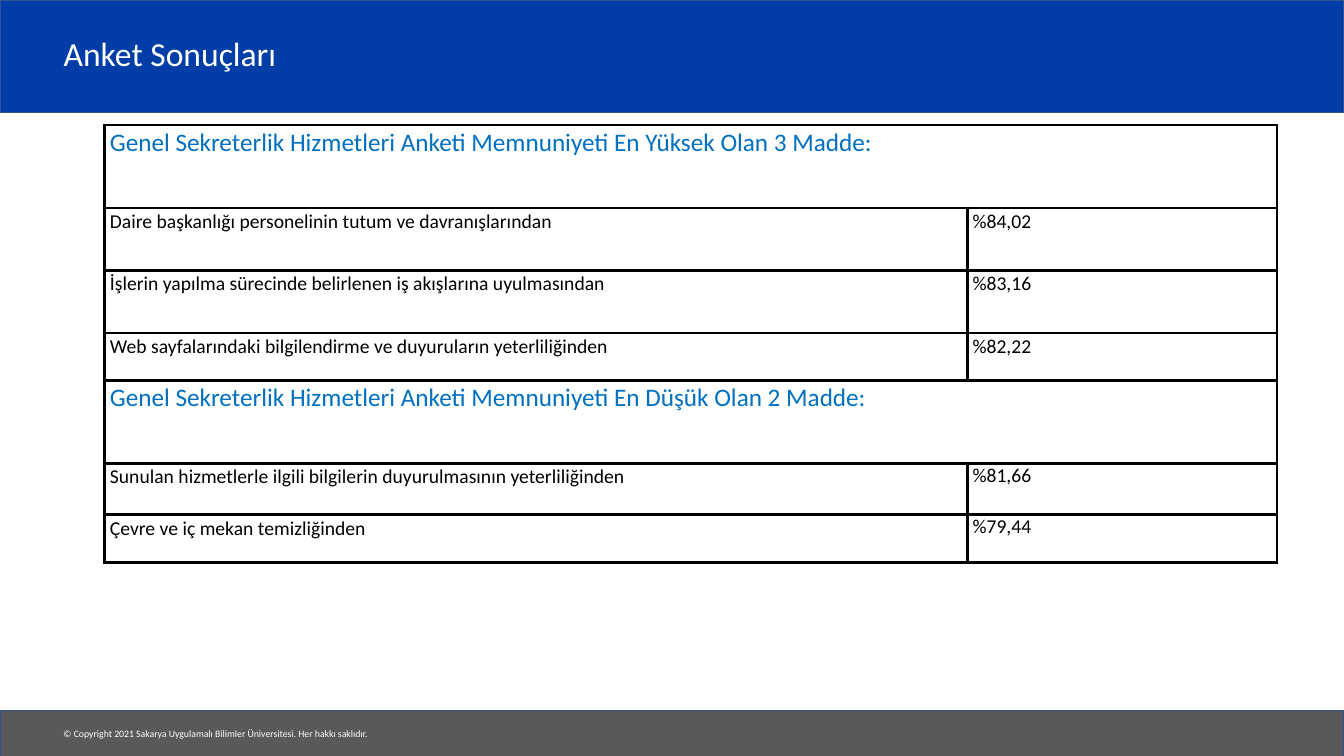
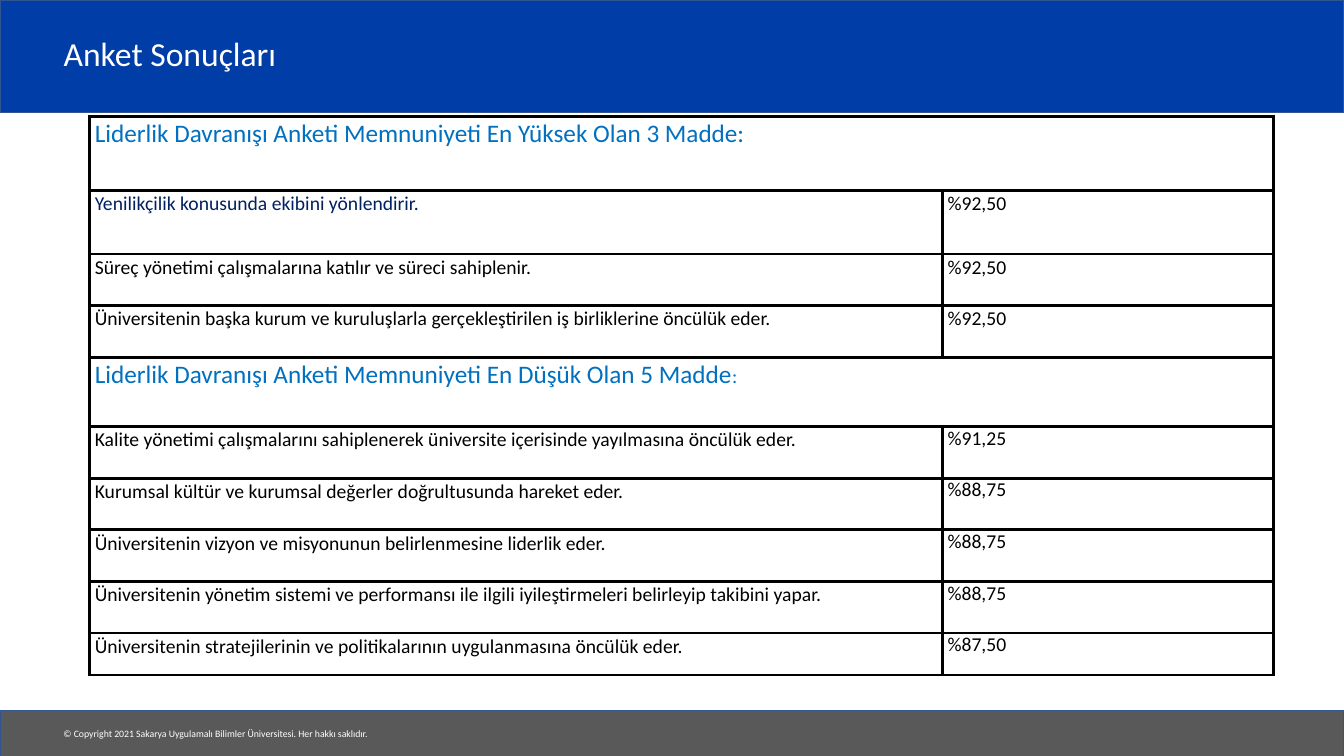
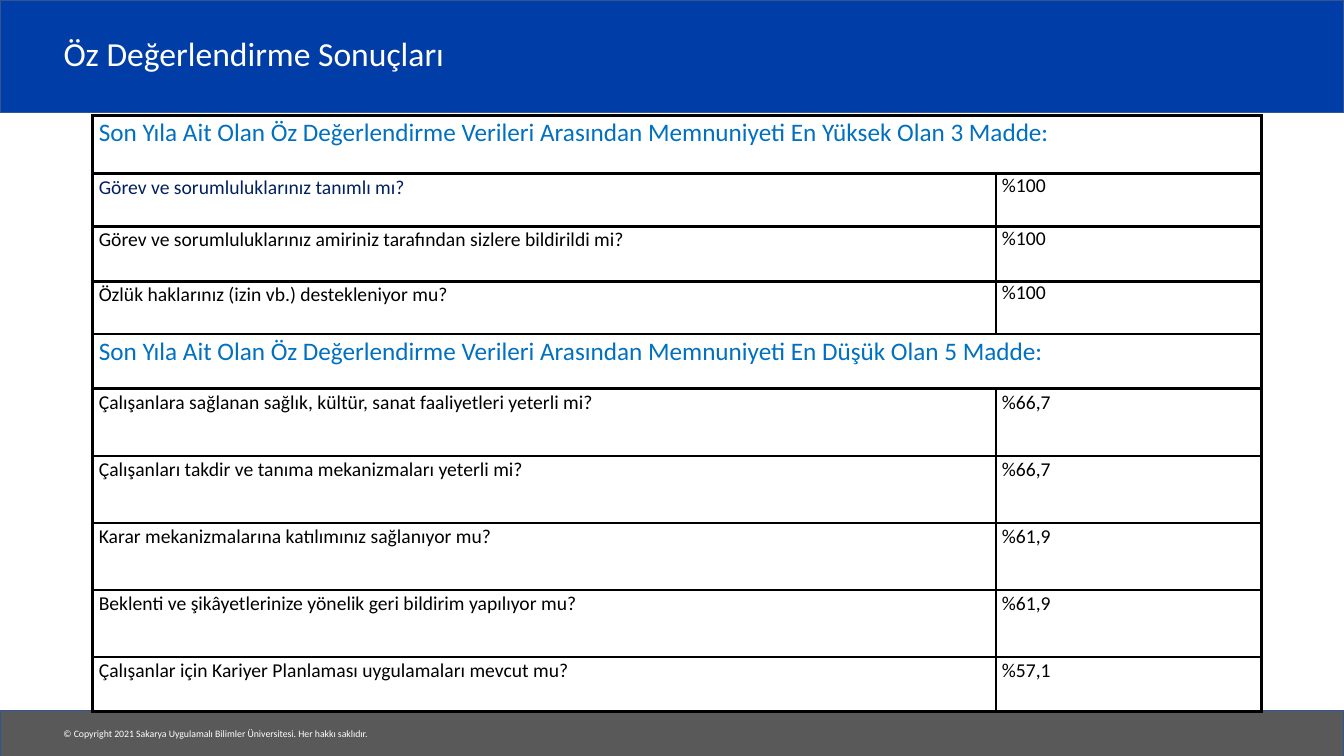
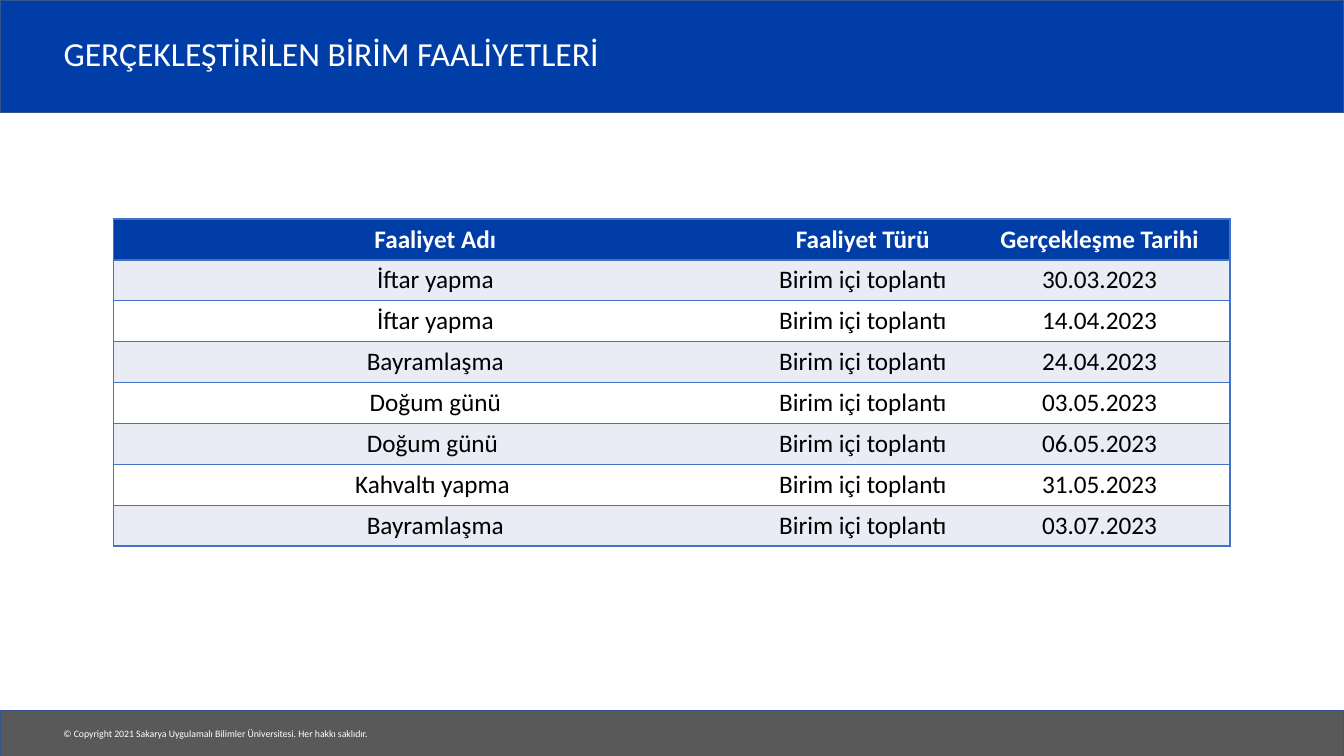
from lxml import etree
from pptx import Presentation
from pptx import util as u
from pptx.dml.color import RGBColor
from pptx.enum import shapes, text
from pptx.oxml.ns import qn

BLUE = RGBColor(0x00, 0x3D, 0xA6)
GREY = RGBColor(0x59, 0x59, 0x59)
EDGE = RGBColor(0x32, 0x54, 0x91)
HEADING = RGBColor(0x00, 0x70, 0xC0)
NAVY = RGBColor(0x00, 0x20, 0x60)
RULE = RGBColor(0x44, 0x72, 0xC4)
STRIPE = RGBColor(0xE9, 0xEB, 0xF5)
BLACK = RGBColor(0x00, 0x00, 0x00)
WHITE = RGBColor(0xFF, 0xFF, 0xFF)

FONT = "Calibri"
WIDTH, HEIGHT = 33.87, 19.05
MARGIN = 1.35
SIDES = "LRTB"


class Report:
    """Holds the shared style and the current slide; lengths are in cm."""

    def __init__(self):
        self.deck = Presentation()
        self.deck.slide_width, self.deck.slide_height = u.Cm(WIDTH), u.Cm(HEIGHT)
        self.layout = self.deck.slide_layouts[5]
        self.page = None

    # Slide with its title; the first one also furnishes the layout
    def slide(self, title):
        first = self.page is None
        if first:
            self.prepare_layout_title()
        self.page = self.deck.slides.add_slide(self.layout)
        if first:
            self.furnish_layout()
        frame = self.page.shapes.title.text_frame
        frame.vertical_anchor = text.MSO_ANCHOR.MIDDLE
        para = frame.paragraphs[0]
        para.alignment = text.PP_ALIGN.LEFT
        para.line_spacing = 0.9
        self.span(para, title, 24, WHITE)

    def prepare_layout_title(self):
        for holder in list(self.layout.placeholders):
            if holder.placeholder_format.type == shapes.PP_PLACEHOLDER.TITLE:
                holder.left, holder.top = u.Cm(MARGIN), u.Cm(0.48)
                holder.width, holder.height = u.Cm(28.02), u.Cm(1.85)
            else:
                holder.element.getparent().remove(holder.element)

    def furnish_layout(self):
        parts = [self.band(0, 2.84, BLUE), self.band(17.9, 1.16, GREY), self.footer()]
        tree = self.layout.element.cSld.spTree
        for part in parts:
            tree.append(part.element)

    def band(self, top, height, colour):
        box = self.page.shapes.add_shape(
            shapes.MSO_SHAPE.RECTANGLE, 0, u.Cm(top), u.Cm(WIDTH), u.Cm(height))
        box.shadow.inherit = False
        box.fill.solid()
        box.fill.fore_color.rgb = colour
        box.line.color.rgb = EDGE
        box.line.width = u.Pt(1)
        return box

    def footer(self):
        box = self.page.shapes.add_textbox(
            u.Cm(MARGIN), u.Cm(18.21), u.Cm(8.36), u.Cm(0.56))
        box.text_frame.word_wrap = False
        self.span(box.text_frame.paragraphs[0],
                  "© Copyright 2021 Sakarya Uygulamalı Bilimler Üniversitesi. "
                  "Her hakkı saklıdır.", 7, WHITE)
        return box

    # Text
    def span(self, para, words, size, colour, bold=False):
        span = para.add_run()
        span.text = words
        span.font.name = FONT
        span.font.size = u.Pt(size)
        span.font.bold = bold
        span.font.color.rgb = colour

    # Tables
    def grid(self, left, top, widths, heights):
        table = self.page.shapes.add_table(
            len(heights), len(widths), u.Cm(left), u.Cm(top),
            u.Cm(sum(widths)), u.Cm(sum(heights))).table
        table.first_row = table.horz_banding = False
        for column, width in zip(table.columns, widths):
            column.width = u.Cm(width)
        for row, height in zip(table.rows, heights):
            row.height = u.Cm(height)
        return table

    def borders(self, cell, colour, points, drawn=SIDES):
        props = cell._tc.get_or_add_tcPr()
        for side in SIDES:
            line = etree.SubElement(props, qn("a:ln" + side), w=str(int(u.Pt(points))))
            if side in drawn:
                fill = etree.SubElement(line, qn("a:solidFill"))
                etree.SubElement(fill, qn("a:srgbClr"), val=str(colour))
            else:
                etree.SubElement(line, qn("a:noFill"))

    def survey_table(self, left, top, widths, heights, sections, inset=0.13):
        """Each section: heading spans, line spacing of values, rows."""
        table = self.grid(left, top, widths, heights)
        for cell in table.iter_cells():
            self.borders(cell, BLACK, 2.25)
            cell.fill.background()
            cell.margin_left = cell.margin_right = u.Cm(inset)
            cell.margin_top = cell.margin_bottom = 0
        index = 0
        for heading, value_spacing, rows in sections:
            table.cell(index, 0).merge(table.cell(index, 1))
            para = table.cell(index, 0).text_frame.paragraphs[0]
            para.line_spacing = 1.07
            for words, size in heading:
                self.span(para, words, size, HEADING)
            for index, (item, value, *colour) in enumerate(rows, index + 1):
                cells = ((item, 1.07, colour[0] if colour else BLACK),
                         (value, value_spacing, BLACK))
                for column, (words, spacing, shade) in enumerate(cells):
                    para = table.cell(index, column).text_frame.paragraphs[0]
                    para.line_spacing = spacing
                    self.span(para, words, 14, shade)
            index += 1

    def striped_table(self, left, top, widths, row_height, rows):
        table = self.grid(left, top, widths, [row_height] * len(rows))
        for r, row in enumerate(rows):
            for c, words in enumerate(row):
                cell = table.cell(r, c)
                outer = {0: "L", len(row) - 1: "R"}.get(c, "")
                self.borders(cell, RULE, 1, "TB" + outer)
                cell.fill.solid()
                cell.fill.fore_color.rgb = BLUE if r == 0 else STRIPE if r % 2 else WHITE
                para = cell.text_frame.paragraphs[0]
                para.alignment = text.PP_ALIGN.CENTER
                self.span(para, words, 18, BLACK if r else WHITE, bold=r == 0)


def main():
    report = Report()

    # General secretariat survey
    report.slide("Anket Sonuçları")
    report.survey_table(
        2.64, 3.15, [21.74, 7.8], [2.09, 1.57, 1.58, 1.19, 2.1, 1.29, 1.2],
        [([("Genel Sekreterlik Hizmetleri Anketi Memnuniyeti En Yüksek Olan 3 Madde:", 18)],
          1.07,
          [("Daire başkanlığı personelinin tutum ve davranışlarından", "%84,02"),
           ("İşlerin yapılma sürecinde belirlenen iş akışlarına uyulmasından", "%83,16"),
           ("Web sayfalarındaki bilgilendirme ve duyuruların yeterliliğinden", "%82,22")]),
         ([("Genel Sekreterlik Hizmetleri Anketi Memnuniyeti En Düşük Olan 2 Madde:", 18)],
          1.0,
          [("Sunulan hizmetlerle ilgili bilgilerin duyurulmasının yeterliliğinden", "%81,66"),
           ("Çevre ve iç mekan temizliğinden", "%79,44")])])

    # Leadership survey
    report.slide("Anket Sonuçları")
    report.survey_table(
        2.26, 2.93, [21.49, 8.35], [1.87, 1.6, 1.3, 1.3, 1.75] + [1.3] * 4 + [1.06],
        [([("Liderlik Davranışı Anketi Memnuniyeti En Yüksek Olan 3 Madde:", 18)],
          1.07,
          [("Yenilikçilik konusunda ekibini yönlendirir.", "%92,50", NAVY),
           ("Süreç yönetimi çalışmalarına katılır ve süreci sahiplenir.", "%92,50"),
           ("Üniversitenin başka kurum ve kuruluşlarla gerçekleştirilen iş birliklerine "
            "öncülük eder.", "%92,50")]),
         ([("Liderlik Davranışı Anketi Memnuniyeti En Düşük Olan 5 Madde", 18), (":", 14)],
          1.0,
          [("Kalite yönetimi çalışmalarını sahiplenerek üniversite içerisinde yayılmasına "
            "öncülük eder.", "%91,25"),
           ("Kurumsal kültür ve kurumsal değerler doğrultusunda hareket eder.", "%88,75"),
           ("Üniversitenin vizyon ve misyonunun belirlenmesine liderlik eder.", "%88,75"),
           ("Üniversitenin yönetim sistemi ve performansı ile ilgili iyileştirmeleri "
            "belirleyip takibini yapar.", "%88,75"),
           ("Üniversitenin stratejilerinin ve politikalarının uygulanmasına öncülük eder.",
            "%87,50")])])

    # Self-assessment
    report.slide("Öz Değerlendirme Sonuçları")
    report.survey_table(
        2.34, 2.91, [22.76, 6.69], [1.47, 1.33, 1.38, 1.33, 1.38] + [1.69] * 4 + [1.37],
        [([("Son Yıla Ait Olan Öz Değerlendirme Verileri Arasından Memnuniyeti "
            "En Yüksek Olan 3 Madde:", 18)],
          1.0,
          [("Görev ve sorumluluklarınız tanımlı mı?", "%100", NAVY),
           ("Görev ve sorumluluklarınız amiriniz tarafından sizlere bildirildi mi?", "%100"),
           ("Özlük haklarınız (izin vb.) destekleniyor mu?", "%100")]),
         ([("Son Yıla Ait Olan Öz Değerlendirme Verileri Arasından Memnuniyeti "
            "En Düşük Olan 5 Madde:", 18)],
          1.07,
          [("Çalışanlara sağlanan sağlık, kültür, sanat faaliyetleri yeterli mi?", "%66,7"),
           ("Çalışanları takdir ve tanıma mekanizmaları yeterli mi?", "%66,7"),
           ("Karar mekanizmalarına katılımınız sağlanıyor mu?", "%61,9"),
           ("Beklenti ve şikâyetlerinize yönelik geri bildirim yapılıyor mu?", "%61,9"),
           ("Çalışanlar için Kariyer Planlaması uygulamaları mevcut mu?", "%57,1")])],
        inset=0.15)

    # Unit activities
    report.slide("GERÇEKLEŞTİRİLEN BİRİM FAALİYETLERİ")
    activities = [("İftar yapma", "30.03.2023"), ("İftar yapma", "14.04.2023"),
                  ("Bayramlaşma", "24.04.2023"), ("Doğum günü", "03.05.2023"),
                  ("Doğum günü ", "06.05.2023"), ("Kahvaltı yapma ", "31.05.2023"),
                  ("Bayramlaşma", "03.07.2023")]
    report.striped_table(
        2.87, 5.52, [16.2, 5.35, 6.58], 1.03,
        [("Faaliyet Adı", "Faaliyet Türü", "Gerçekleşme Tarihi")]
        + [(name, "Birim içi toplantı", date) for name, date in activities])

    report.deck.save("out.pptx")


if __name__ == "__main__":
    main()
